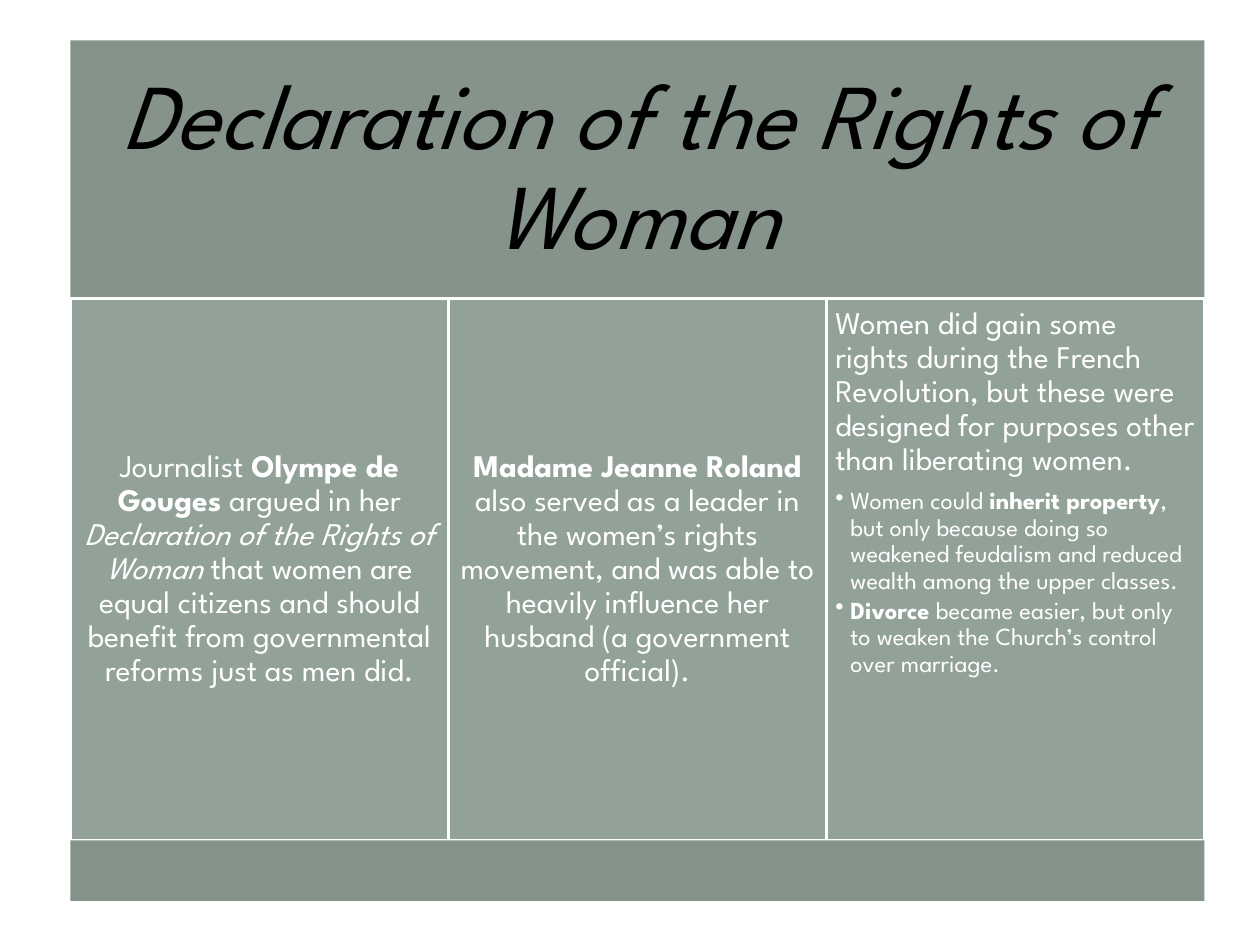
import pptx
import pptx.util
import pptx.dml.color
import pptx.enum.shapes
import pptx.enum.text
import pptx.oxml
import pptx.oxml.ns
from pptx.util import Inches, Pt

COLORS = {"band": "85938B", "column": "93A299", "white": "FFFFFF", "black": "000000"}
FONT = "League Spartan"
ALIGN = pptx.enum.text.PP_ALIGN
ANCHOR = pptx.enum.text.MSO_ANCHOR


def rgb(name):
    return pptx.dml.color.RGBColor.from_string(COLORS[name])


class SlideStyle:
    """Holds the style and the current slide."""

    def __init__(self, slide):
        self.slide = slide

    def panel(self, left, top, width, height, fill, outlined=False):
        panel = self.slide.shapes.add_shape(
            pptx.enum.shapes.MSO_SHAPE.RECTANGLE,
            Inches(left), Inches(top), Inches(width), Inches(height))
        panel.shadow.inherit = False
        panel.fill.solid()
        panel.fill.fore_color.rgb = rgb(fill)
        if outlined:
            panel.line.color.rgb = rgb("white")
            panel.line.width = Pt(2)
        else:
            panel.line.fill.background()
        return panel

    def frame(self, panel, inset, anchor):
        frame = panel.text_frame
        frame.word_wrap = True
        frame.vertical_anchor = anchor
        frame.margin_left = frame.margin_right = Inches(inset)
        frame.margin_top = frame.margin_bottom = Inches(inset)
        return frame

    def paragraph(self, paragraph, runs, size, color="white", align=ALIGN.CENTER, after=0):
        """Each run is a (text, style) pair; style is "", "b" or "i"."""
        paragraph.alignment = align
        paragraph.line_spacing = 0.9
        paragraph.space_after = Pt(after)
        paragraph.font.name = FONT
        paragraph.font.size = Pt(size)
        paragraph.font.color.rgb = rgb(color)
        for text, style in runs:
            run = paragraph.add_run()
            run.text = text
            if style == "b":
                run.font.bold = True
            elif style == "i":
                run.font.italic = True

    def bullet(self, paragraph, runs):
        self.paragraph(paragraph, runs, 14, align=ALIGN.LEFT, after=2)
        paragraph.level = 1
        properties = paragraph._p.get_or_add_pPr()
        properties.set("marL", str(Inches(0.12)))
        properties.set("indent", str(-Inches(0.12)))
        mark = pptx.oxml.parse_xml(
            f'<a:buChar {pptx.oxml.ns.nsdecls("a")} char="•"/>')
        # The bullet belongs after spacing and before default run properties
        properties.find(pptx.oxml.ns.qn("a:defRPr")).addprevious(mark)


LEFT, WIDTH = 0.56, 9
COLUMN_TOP, COLUMN_HEIGHT, COLUMN_WIDTH = 2.37, 4.3, WIDTH / 3

CENTERED_COLUMNS = [
    [("Journalist ", ""), ("Olympe de Gouges", "b"), (" argued in her ", ""),
     ("Declaration of the Rights of Woman", "i"),
     (" that women are equal citizens and should benefit from governmental "
      "reforms just as men did.", "")],
    [("Madame Jeanne Roland", "b"),
     (" also served as a leader in the women’s rights movement, and was able to "
      "heavily influence her husband (a government official).", "")],
]
RIGHTS_INTRO = [("Women did gain some rights during the French Revolution, but these "
                 "were designed for purposes other than liberating women.", "")]
RIGHTS_BULLETS = [
    [("Women could ", ""), ("inherit property", "b"),
     (", but only because doing so weakened feudalism and reduced wealth among "
      "the upper classes.", "")],
    [("Divorce", "b"),
     (" became easier, but only to weaken the Church’s control over marriage.", "")],
]


def main():
    deck = pptx.Presentation()
    deck.slide_width, deck.slide_height = Inches(10), Inches(7.5)
    style = SlideStyle(deck.slides.add_slide(deck.slide_layouts[6]))

    # Title band
    title_band = style.panel(LEFT, 0.32, WIDTH, 2.05, "band")
    title = style.frame(title_band, 0.22, ANCHOR.MIDDLE)
    style.paragraph(title.paragraphs[0],
                    [("Declaration of the Rights of Woman", "")], 53, "black")
    title.paragraphs[0].font.italic = True

    # Three columns
    columns = [style.panel(LEFT + i * COLUMN_WIDTH, COLUMN_TOP, COLUMN_WIDTH,
                           COLUMN_HEIGHT, "column", outlined=True) for i in range(3)]
    for column, runs in zip(columns, CENTERED_COLUMNS):
        frame = style.frame(column, 0.07, ANCHOR.MIDDLE)
        style.paragraph(frame.paragraphs[0], runs, 18)

    # Rights gained, with bullets
    rights = style.frame(columns[2], 0.07, ANCHOR.TOP)
    style.paragraph(rights.paragraphs[0], RIGHTS_INTRO, 18, align=ALIGN.LEFT, after=6.3)
    for runs in RIGHTS_BULLETS:
        style.bullet(rights.add_paragraph(), runs)

    # Bottom band
    style.panel(LEFT, COLUMN_TOP + COLUMN_HEIGHT, WIDTH, 0.48, "band")

    deck.save("out.pptx")


if __name__ == "__main__":
    main()
